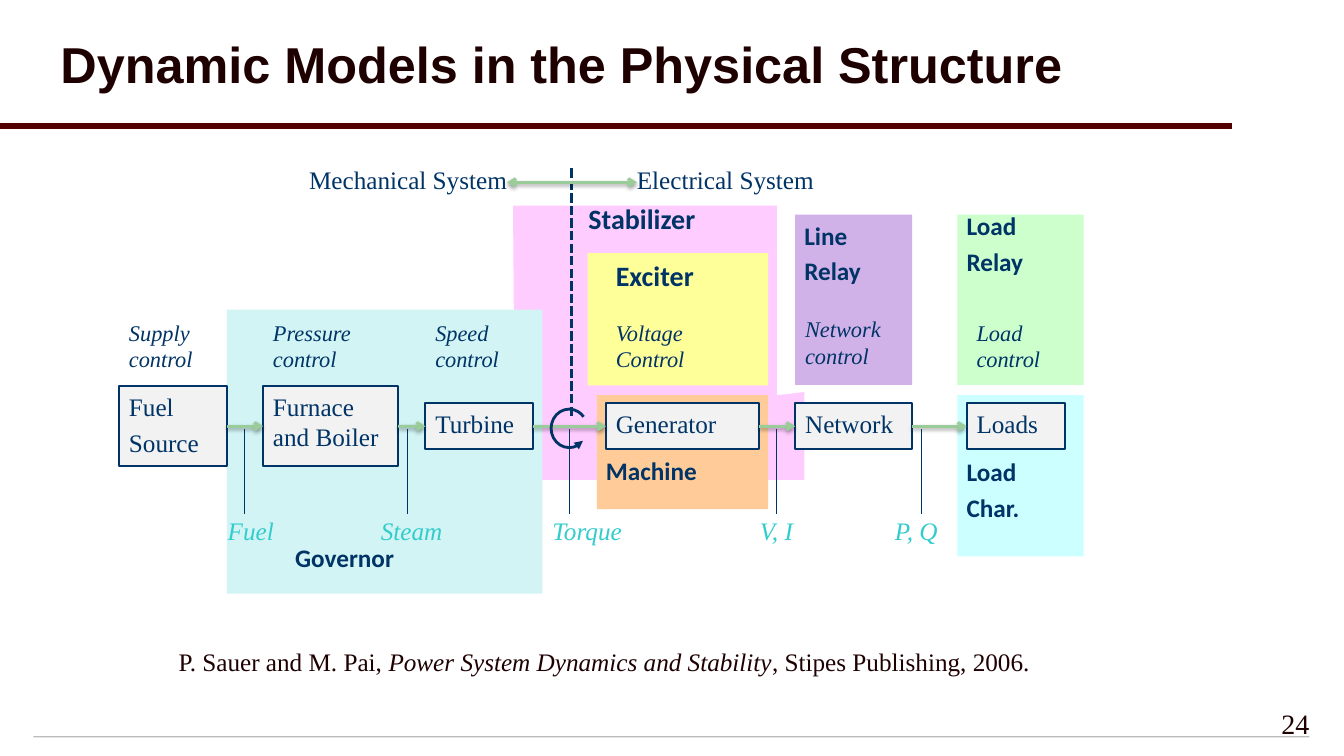
"""Build the slide on dynamic models in the physical structure of a power system."""
from dataclasses import dataclass
from itertools import pairwise
from typing import Any

from lxml.etree import SubElement
from pptx import Presentation
from pptx.dml.color import RGBColor
from pptx.enum.dml import MSO_LINE
from pptx.enum.shapes import MSO_CONNECTOR as Link, MSO_SHAPE as Preset
from pptx.enum.text import MSO_ANCHOR as Anchor, PP_ALIGN as Align
from pptx.oxml.ns import qn
from pptx.util import Cm, Pt

NAVY, MAROON, TEAL, SAGE = "003366", "1E0000", "33CCCC", "99CC99"
AXIS = 10.74
ONE_LINE, TWO_LINES = 1.17, 2.03
SERIF = {"name": "Times New Roman", "size": Pt(18)}
HEADING = {"name": "Calibri", "size": Pt(18), "bold": True}
BIG_HEADING = {**HEADING, "size": Pt(20)}
CONTROL = {**SERIF, "size": Pt(16), "italic": True}
FLOW = {**SERIF, "italic": True}


@dataclass
class Zone:
    """A coloured area behind the diagram."""
    left: float
    top: float
    width: float
    height: float
    fill: str


@dataclass
class Label:
    """A text with its place and font format."""
    text: str
    left: float
    top: float
    width: float
    height: float
    font: dict[str, Any]
    color: str = NAVY
    inset: float = 0.25
    align: Align = Align.LEFT


@dataclass
class Stage:
    """A boxed stage of the power chain, with the control above it."""
    text: str
    left: float
    width: float
    height: float
    control: str = ""
    control_top: float = 7.9
    control_width: float = 0


@dataclass
class Flow:
    """A quantity passed between stages, with its pointer line."""
    text: str
    left: float
    width: float
    pointer: float


ZONES = [
    Zone(15.04, 9.96, 4.32, 2.87, "FFCC99"),
    Zone(20.04, 5.41, 2.95, 4.29, "D1B2E8"),
    Zone(24.13, 5.41, 3.18, 4.29, "CCFFCC"),
    Zone(24.13, 9.96, 3.18, 4.06, "CCFFFF"),
    Zone(5.72, 7.8, 7.95, 7.16, "D2F4F4"),
    Zone(14.81, 6.38, 4.55, 3.33, "FFFF99"),
]
STABILIZER_OUTLINE = [(20.27, 12.09), (20.27, 9.88), (19.58, 9.96),
                      (19.58, 5.18), (12.93, 5.18), (12.98, 12.09)]
HEADINGS = [
    Label("Machine", 15.27, 11.35, 3.86, 1.17, HEADING, inset=0),
    Label("Governor", 7.19, 13.54, 6.15, 1.17, HEADING),
    Label("Exciter", 15.27, 6.38, 3.86, 1.24, BIG_HEADING),
    Label("Load\nChar.", 24.36, 11.38, 2.72, 2.18, HEADING, inset=0),
    Label("Load\nRelay", 24.36, 5.18, 2.72, 2.18, HEADING, inset=0),
    Label("Line\nRelay", 20.27, 5.41, 2.26, 2.18, HEADING, inset=0),
    Label("Stabilizer", 14.58, 4.95, 4.32, 1.24, BIG_HEADING),
]
STAGES = [
    Stage("Fuel\nSource", 3, 2.72, TWO_LINES, "Supply control"),
    Stage("Furnace and Boiler", 6.63, 3.4, TWO_LINES, "Pressure control"),
    Stage("Turbine", 10.72, 2.72, ONE_LINE, "Speed control"),
    Stage("Generator", 15.27, 3.86, ONE_LINE, "Voltage Control"),
    Stage("Network", 20.04, 2.95, ONE_LINE, "Network control", 7.82),
    Stage("Loads", 24.36, 2.49, ONE_LINE, "Load control", control_width=2.72),
]
FLOWS = [
    Flow("Fuel", 5.49, 2.49, 6.17),
    Flow("Steam", 9.35, 2.49, 10.26),
    Flow("Torque", 13.67, 2.49, 14.35),
    Flow("V, I", 18.9, 1.83, 19.58),
    Flow("P, Q", 22.3, 1.83, 23.22),
]
SYSTEMS = [
    Label("Mechanical System", 7.09, 4.01, 5.69, ONE_LINE, SERIF, inset=0, align=Align.RIGHT),
    Label("Electrical System", 16.05, 4.01, 5.23, ONE_LINE, SERIF, inset=0),
]


def paint(target: Any, color: str) -> None:
    """Colour a fill or a font with a hex string."""
    if hasattr(target, "solid"):
        target.solid()
        target = target.fore_color
    else:
        target = target.color
    target.rgb = RGBColor.from_string(color)


def set_all(target: Any, values: dict[str, Any]) -> None:
    """Set every attribute named in the values."""
    for name, value in values.items():
        setattr(target, name, value)


def add_span(para: Any, text: str, font: dict[str, Any], color: str) -> None:
    """Append formatted text to a paragraph."""
    span = para.add_run()
    span.text = text
    set_all(span.font, font)
    paint(span.font, color)


def write(box: Any, label: Label) -> None:
    """Write a label into a box, one paragraph per line."""
    frame = box.text_frame
    set_all(frame, {"word_wrap": True, "vertical_anchor": Anchor.TOP,
                    "margin_left": Cm(label.inset), "margin_right": Cm(label.inset),
                    "margin_top": Cm(0.13), "margin_bottom": Cm(0.13)})
    for index, line in enumerate(label.text.split("\n")):
        para = frame.add_paragraph() if index else frame.paragraphs[0]
        para.alignment = label.align
        if index:
            para.space_before = Pt(4)
        add_span(para, line, label.font, label.color)


def add_label(page: Any, label: Label) -> Any:
    """Add a text box for a label."""
    box = page.shapes.add_textbox(*map(Cm, (label.left, label.top, label.width, label.height)))
    write(box, label)
    return box


def add_zone(page: Any, zone: Zone) -> Any:
    """Add a plain rectangle without outline."""
    box = page.shapes.add_shape(Preset.RECTANGLE, *map(Cm, (zone.left, zone.top, zone.width, zone.height)))
    box.shadow.inherit = False
    paint(box.fill, zone.fill)
    box.line.fill.background()
    return box


def add_stage(page: Any, stage: Stage) -> Any:
    """Add a stage box centred on the axis, and its control text."""
    top = AXIS - stage.height / 2
    box = add_zone(page, Zone(stage.left, top, stage.width, stage.height, "F2F2F2"))
    paint(box.line.fill, NAVY)
    box.line.width = Pt(1.5)
    write(box, Label(stage.text, stage.left, top, stage.width, stage.height, SERIF))
    add_label(page, Label(stage.control, stage.left, stage.control_top,
                          stage.control_width or stage.width, 1.83, CONTROL))
    return box


def add_line(page: Any, start: tuple[float, float], end: tuple[float, float], color: str, width: float) -> Any:
    """Add a straight line without shadow."""
    line = page.shapes.add_connector(Link.STRAIGHT, *map(Cm, (*start, *end)))
    paint(line.line.fill, color)
    line.line.width = Pt(width)
    SubElement(line._element.spPr, qn("a:effectLst"))
    return line


def add_end(shape: Any, end: str, kind: str) -> None:
    """Put an arrowhead on the headEnd or tailEnd of an outline."""
    SubElement(shape._element.spPr.find(qn("a:ln")), qn(f"a:{end}"), type=kind)


def join(page: Any, source: Any, target: Any, both_ways: bool = False) -> None:
    """Join two boxes, right side to left side, with a shaded arrow."""
    arrow = add_line(page, (0, 0), (1, 1), SAGE, 2)
    arrow.begin_connect(source, 3)
    arrow.end_connect(target, 1)
    for end in ("headEnd", "tailEnd") if both_ways else ("tailEnd",):
        add_end(arrow, end, "arrow")
    effects = arrow._element.spPr.find(qn("a:effectLst"))
    shadow = SubElement(effects, qn("a:outerShdw"), blurRad=str(Pt(3.1)), dist=str(Pt(1.6)),
                        dir="5400000", rotWithShape="0")
    shade = SubElement(shadow, qn("a:srgbClr"), val="000000")
    SubElement(shade, qn("a:alpha"), val="38000")


def add_title(page: Any, text: str) -> None:
    """Place and format the title."""
    title = page.shapes.title
    set_all(title, {"left": Cm(1.27), "top": Cm(0.2), "width": Cm(31.04), "height": Cm(2.97)})
    title.text_frame.vertical_anchor = Anchor.MIDDLE
    para = title.text_frame.paragraphs[0]
    set_all(para, {"alignment": Align.LEFT, "line_spacing": 0.9})
    add_span(para, text, {"name": "Arial", "size": Pt(36), "bold": True}, MAROON)


def add_rotation(page: Any) -> None:
    """Add the round arrow on the turbine shaft."""
    arc = page.shapes.add_shape(Preset.ARC, *map(Cm, (13.89, 10.31, 0.91, 0.97)))
    arc.shadow.inherit = False
    arc.adjustments[0], arc.adjustments[1] = 25.21, 192.86
    arc.fill.background()
    paint(arc.line.fill, NAVY)
    arc.line.width = Pt(2)
    add_end(arc, "headEnd", "triangle")


def main() -> None:
    """Draw the slide and save it."""
    deck = Presentation()
    set_all(deck, {"slide_width": Cm(33.87), "slide_height": Cm(19.05)})
    page = deck.slides.add_slide(deck.slide_layouts[5])
    add_zone(page, Zone(0.84, 18.55, 32.16, 0.03, "BBBBBB"))
    add_line(page, (0, 3.18), (31.04, 3.18), "500000", 4)
    add_title(page, "Dynamic Models in the Physical Structure")

    corners = [(Cm(x), Cm(y)) for x, y in STABILIZER_OUTLINE]
    outline = page.shapes.build_freeform(*corners[0])
    outline.add_line_segments(corners[1:], close=True)
    stabilizer = outline.convert_to_shape()
    stabilizer.shadow.inherit = False
    paint(stabilizer.fill, "FFCCFF")
    stabilizer.line.fill.background()

    for zone in ZONES:
        add_zone(page, zone)
    for heading in HEADINGS:
        add_label(page, heading)
    stages = [add_stage(page, stage) for stage in STAGES]
    divider = add_line(page, (14.4, 4.24), (14.4, 10.54), NAVY, 2.25)
    divider.line.dash_style = MSO_LINE.SQUARE_DOT
    mechanical, electrical = [add_label(page, system) for system in SYSTEMS]
    join(page, mechanical, electrical, both_ways=True)
    for source, target in pairwise(stages):
        join(page, source, target)
    for flow in FLOWS:
        add_label(page, Label(flow.text, flow.left, 12.85, flow.width, ONE_LINE, FLOW, TEAL))
        add_line(page, (flow.pointer, 12.95), (flow.pointer, 10.8), NAVY, 0.75)
    add_rotation(page)

    reference = add_label(page, Label("P. Sauer and M. Pai, ", 2.84, 16.15, 24.77, 1.19, SERIF, MAROON,
                                      align=Align.CENTER))
    para = reference.text_frame.paragraphs[0]
    add_span(para, "Power System Dynamics and Stability", FLOW, MAROON)
    add_span(para, ", Stipes Publishing, 2006.", SERIF, MAROON)
    number = add_label(page, Label("24", 30.91, 17.58, 2.34, 1.27, {**SERIF, "size": Pt(20)}, MAROON,
                                   align=Align.RIGHT))
    number.text_frame.vertical_anchor = Anchor.MIDDLE
    deck.save("out.pptx")


if __name__ == "__main__":
    main()
